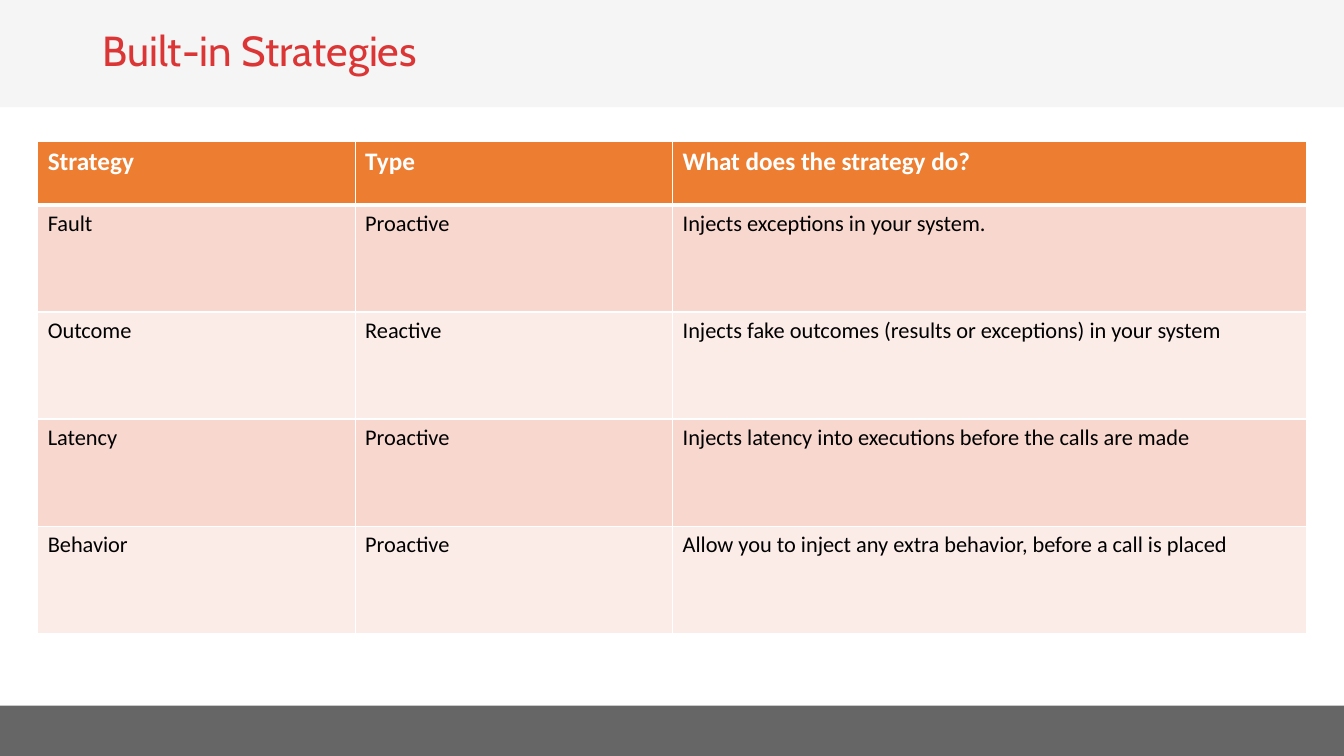
from lxml.etree import SubElement
from pptx import Presentation
from pptx.dml.color import RGBColor
from pptx.enum.shapes import MSO_SHAPE as Shape
from pptx.enum.text import MSO_ANCHOR as Anchor, PP_ALIGN as Align
from pptx.oxml.ns import qn
from pptx.util import Cm, Pt

COLORS = {
    "header_band": "F5F5F5",
    "footer_band": "666666",
    "title": "DB3635",
    "table_header": "ED7D31",
    "dark_row": "F8D7CE",
    "light_row": "FCECE8",
    "white": "FFFFFF",
    "black": "000000",
}
SLIDE_WIDTH, SLIDE_HEIGHT = 33.87, 19.05

STRATEGIES = [
    ("Strategy", "Type", "What does the strategy do?"),
    ("Fault", "Proactive", "Injects exceptions in your system."),
    ("Outcome", "Reactive", "Injects fake outcomes (results or exceptions) in your system"),
    ("Latency", "Proactive", "Injects latency into executions before the calls are made"),
    ("Behavior", "Proactive", "Allow you to inject any extra behavior, before a call is placed"),
]


class StrategySlide:
    """Hold the style and the current slide, and draw its elements."""

    def __init__(self, deck):
        """Add a title-only slide to the deck."""
        self.title_font, self.body_font = "Cabin", "Calibri"
        self.slide = deck.slides.add_slide(deck.slide_layouts[5])

    def color(self, key):
        """Return the named colour."""
        return RGBColor.from_string(COLORS[key])

    def style(self, paragraph, font_name, size, color, bold=False):
        """Format every run of a paragraph."""
        for run in paragraph.runs:
            run.font.name, run.font.size, run.font.bold = font_name, Pt(size), bold
            run.font.color.rgb = self.color(color)

    def band(self, top, height, color):
        """Draw a full-width band behind the title."""
        band = self.slide.shapes.add_shape(
            Shape.RECTANGLE, 0, Cm(top), Cm(SLIDE_WIDTH), Cm(height))
        band.shadow.inherit = False
        band.fill.solid()
        band.fill.fore_color.rgb = self.color(color)
        band.line.fill.background()
        self.slide.shapes.title.element.addprevious(band.element)

    def title(self, text, left, top, width, height):
        """Place and format the title placeholder."""
        title = self.slide.shapes.title
        title.left, title.top = Cm(left), Cm(top)
        title.width, title.height = Cm(width), Cm(height)
        frame = title.text_frame
        frame.text = text
        frame.word_wrap = True
        frame.vertical_anchor = Anchor.MIDDLE
        heading = frame.paragraphs[0]
        heading.alignment, heading.line_spacing = Align.LEFT, 0.9
        self.style(heading, self.title_font, 30, "title")

    def borders(self, cell, **widths):
        """Give a cell white borders of the given widths in points."""
        properties = cell._tc.get_or_add_tcPr()
        for side, width in widths.items():
            line = SubElement(properties, qn(f"a:ln{side}"), w=str(Pt(width)))
            fill = SubElement(line, qn("a:solidFill"))
            SubElement(fill, qn("a:srgbClr"), val=COLORS["white"])

    def table(self, rows, left, top, widths, heights):
        """Draw a table with a header row and alternating body rows."""
        table = self.slide.shapes.add_table(
            len(rows), len(widths), Cm(left), Cm(top),
            Cm(sum(widths)), Cm(sum(heights))).table
        for column, width in zip(table.columns, widths):
            column.width = Cm(width)
        for index, (row, height, texts) in enumerate(zip(table.rows, heights, rows)):
            row.height = Cm(height)
            header = index == 0
            fill = "table_header" if header else ("light_row", "dark_row")[index % 2]
            for cell, text in zip(row.cells, texts):
                self.borders(cell, L=1, R=1, T=3 if index == 1 else 1, B=3 if header else 1)
                cell.fill.solid()
                cell.fill.fore_color.rgb = self.color(fill)
                cell.text_frame.text = text
                self.style(cell.text_frame.paragraphs[0], self.body_font,
                           18 if header else 16, "white" if header else "black", header)


def main():
    """Build the slide and save it."""
    deck = Presentation()
    deck.slide_width, deck.slide_height = Cm(SLIDE_WIDTH), Cm(SLIDE_HEIGHT)
    page = StrategySlide(deck)
    page.band(17.78, 1.27, "footer_band")
    page.band(0, 2.7, "header_band")
    page.title("Built-in Strategies", 2.33, 0.1, 26.87, 2.46)
    page.table(STRATEGIES, 0.95, 3.56, [8, 8, 15.98], [1.6] + [2.7] * 4)
    deck.save("out.pptx")


if __name__ == "__main__":
    main()
